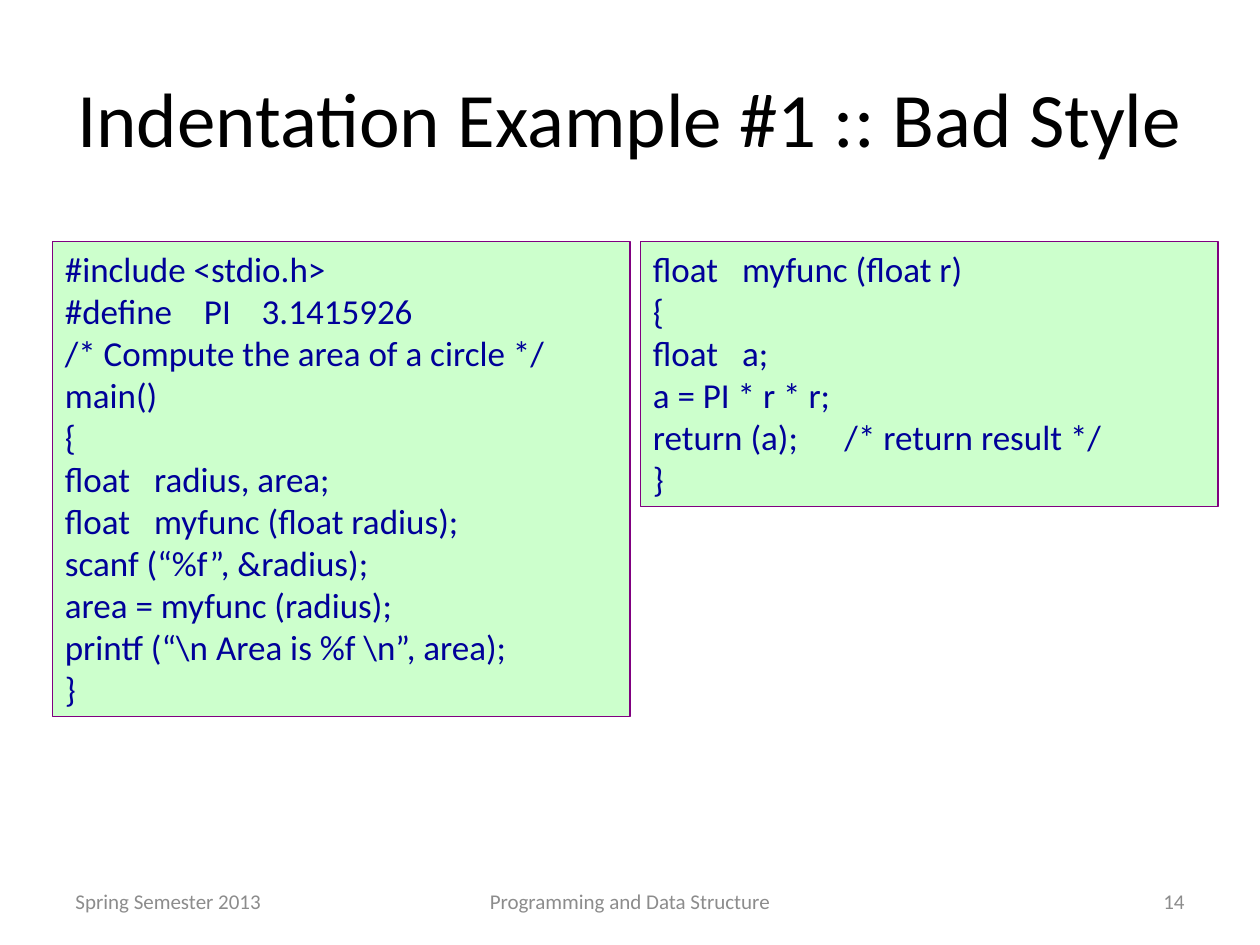
from pptx import Presentation
from pptx.dml.color import RGBColor
from pptx.enum.shapes import MSO_SHAPE
from pptx.enum.text import MSO_ANCHOR, MSO_AUTO_SIZE, PP_ALIGN
from pptx.oxml.xmlchemy import OxmlElement
from pptx.util import Pt

FONT = "Calibri"
BLACK = RGBColor(0x00, 0x00, 0x00)
GREY = RGBColor(0x8C, 0x8C, 0x8C)
NAVY = RGBColor(0x00, 0x00, 0x99)
PALE_GREEN = RGBColor(0xCC, 0xFF, 0xCC)
PURPLE = RGBColor(0x80, 0x00, 0x80)

CODE_TOP = 138
CODE_WIDTH = 330
CODE_LINE_HEIGHT = 24
CODE_PADDING = 7.6

# Each line of code is followed by the tab stops it uses.
DECLARATION = (51,)
MAIN_CODE = [
    ("#include <stdio.h>", ()),
    ("#define\tPI\t3.1415926", (79.5, 112.5)),
    ("/* Compute the area of a circle */", ()),
    ("main()", ()),
    ("{", ()),
    ("float\tradius, area;", DECLARATION),
    ("float\tmyfunc (float radius);", DECLARATION),
    ("scanf (“%f”, &radius);", ()),
    ("area = myfunc (radius);", ()),
    ("printf (“\\n Area is %f \\n”, area);", ()),
    ("}", ()),
]
FUNCTION_CODE = [
    ("float\tmyfunc (float r)", DECLARATION),
    ("{", ()),
    ("float\ta;", DECLARATION),
    ("a = PI * r * r;", ()),
    ("return (a);\t/* return result */", (109.5,)),
    ("}", ()),
]
FOOTERS = [
    ("Spring Semester 2013", 36, 168, PP_ALIGN.LEFT),
    ("Programming and Data Structure", 246, 228, PP_ALIGN.CENTER),
    ("14", 516, 168, PP_ALIGN.RIGHT),
]


def write(paragraph, text, size, color, align=PP_ALIGN.LEFT):
    paragraph.alignment = align
    run = paragraph.add_run()
    run.text = text
    run.font.name = FONT
    run.font.size = Pt(size)
    run.font.color.rgb = color


def set_tab_stops(paragraph, stops):
    tab_list = OxmlElement("a:tabLst")
    for stop in stops:
        tab = OxmlElement("a:tab")
        tab.set("pos", str(Pt(stop)))
        tab.set("algn", "l")
        tab_list.append(tab)
    paragraph._p.get_or_add_pPr().append(tab_list)


def add_title(slide, text):
    title = slide.shapes.title
    title.left, title.top = Pt(36), Pt(21.6)
    title.width, title.height = Pt(648), Pt(90)
    title.text_frame.vertical_anchor = MSO_ANCHOR.MIDDLE
    write(title.text_frame.paragraphs[0], text, 44, BLACK, PP_ALIGN.CENTER)


def add_footer(slide, text, left, width, align):
    footer = slide.shapes.add_textbox(Pt(left), Pt(500.5), Pt(width), Pt(28.75))
    frame = footer.text_frame
    frame.word_wrap = True
    frame.vertical_anchor = MSO_ANCHOR.MIDDLE
    write(frame.paragraphs[0], text, 12, GREY, align)


def add_code_box(slide, left, code):
    height = CODE_LINE_HEIGHT * len(code) + CODE_PADDING
    box = slide.shapes.add_shape(
        MSO_SHAPE.RECTANGLE, Pt(left), Pt(CODE_TOP), Pt(CODE_WIDTH), Pt(height))
    box.shadow.inherit = False
    box.fill.solid()
    box.fill.fore_color.rgb = PALE_GREEN
    box.line.color.rgb = PURPLE
    box.line.width = Pt(0.75)
    frame = box.text_frame
    frame.word_wrap = True
    frame.auto_size = MSO_AUTO_SIZE.SHAPE_TO_FIT_TEXT
    frame.vertical_anchor = MSO_ANCHOR.TOP
    for index, (line, stops) in enumerate(code):
        paragraph = frame.add_paragraph() if index else frame.paragraphs[0]
        write(paragraph, line, 20, NAVY)
        if stops:
            set_tab_stops(paragraph, stops)


def main():
    deck = Presentation()
    deck.slide_width, deck.slide_height = Pt(720), Pt(540)
    slide = deck.slides.add_slide(deck.slide_layouts[5])
    add_title(slide, "Indentation Example #1 :: Bad Style")
    for footer in FOOTERS:
        add_footer(slide, *footer)
    add_code_box(slide, 30, MAIN_CODE)
    add_code_box(slide, 366, FUNCTION_CODE)
    deck.save("out.pptx")


if __name__ == "__main__":
    main()
